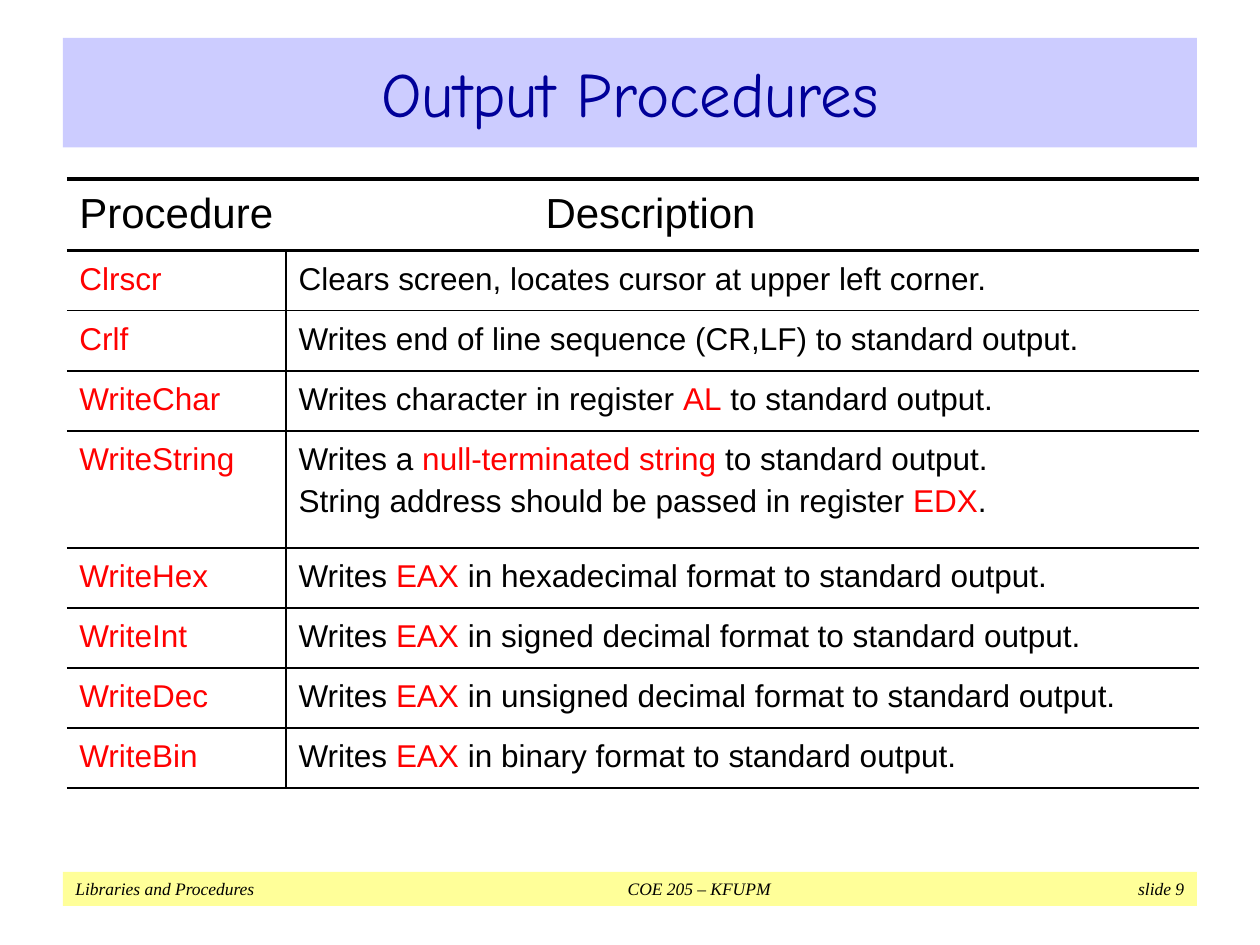
from lxml.etree import SubElement
from pptx import Presentation
from pptx.dml.color import RGBColor
from pptx.enum.shapes import MSO_SHAPE
from pptx.enum.text import MSO_ANCHOR, PP_ALIGN
from pptx.oxml import parse_xml
from pptx.oxml.ns import nsdecls, qn
from pptx.util import Inches, Pt

BLACK, RED, NAVY = "000000", "FF0000", "000099"
LILAC, YELLOW = "CCCCFF", "FFFF99"

TITLE = "Output Procedures"
FOOTER = ["Libraries and Procedures", "COE 205 – KFUPM", "slide 9"]
FOOTER_TABS = [(4.95, "ctr"), (8.8, "r")]
HEADINGS = ["Procedure", "Description"]

# Each description is a list of lines; odd pieces of a line are highlighted
PROCEDURES = [
    ("Clrscr", [["Clears screen, locates cursor at upper left corner."]]),
    ("Crlf", [["Writes end of line sequence (CR,LF) to standard output."]]),
    ("WriteChar", [["Writes character in register ", "AL", " to standard output."]]),
    ("WriteString", [
        ["Writes a ", "null-terminated string ", "to standard output."],
        ["String address should be passed in register ", "EDX", "."],
    ]),
    ("WriteHex", [["Writes ", "EAX", " in hexadecimal format to standard output."]]),
    ("WriteInt", [["Writes ", "EAX", " in signed decimal format to standard output."]]),
    ("WriteDec", [["Writes ", "EAX", " in unsigned decimal format to standard output."]]),
    ("WriteBin", [["Writes ", "EAX", " in binary format to standard output."]]),
]

COLUMN_WIDTHS = [Inches(1.74), Inches(7.25)]
HEADER_HEIGHT, ROW_HEIGHT, TALL_HEIGHT = Inches(0.57), Pt(34.3), Inches(0.93)
THICK, THIN = 2.25, 1


def color(value):
    return RGBColor.from_string(value)


def add_span(para, text, size, value, font="Arial", italic=False):
    span = para.add_run()
    span.text = text
    span.font.name = font
    span.font.size = Pt(size)
    span.font.italic = italic
    span.font.bold = False
    span.font.color.rgb = color(value)


def add_band(page, top, height, fill):
    box = page.shapes.add_shape(
        MSO_SHAPE.RECTANGLE, Inches(0.5), Inches(top), Inches(9), Inches(height))
    box.shadow.inherit = False
    box.fill.solid()
    box.fill.fore_color.rgb = color(fill)
    box.line.fill.background()
    box.text_frame.word_wrap = True
    box.text_frame.vertical_anchor = MSO_ANCHOR.MIDDLE
    return box.text_frame.paragraphs[0]


def set_borders(cell, **widths):
    """Draw the given sides (L, R, T, B) in points and clear the others."""
    properties = cell._tc.get_or_add_tcPr()
    for index, side in enumerate("LRTB"):
        width = widths.get(side, 0)
        paint = (f'<a:solidFill><a:srgbClr val="{BLACK}"/></a:solidFill>'
                 if width else "<a:noFill/>")
        properties.insert(index, parse_xml(
            f'<a:ln{side} {nsdecls("a")} w="{int(Pt(width))}">{paint}</a:ln{side}>'))


def fill_cell(cell, lines, size, value):
    cell.fill.background()
    cell.margin_left = Inches(0.1)
    cell.margin_right = 0
    cell.margin_top = cell.margin_bottom = Inches(0.09)
    frame = cell.text_frame
    for index, pieces in enumerate(lines):
        para = frame.add_paragraph() if index else frame.paragraphs[0]
        if index:
            para.space_before = Pt(0.2 * size)
        for number, piece in enumerate(pieces):
            add_span(para, piece, size, RED if number % 2 else value)


def add_procedure_table(page):
    heights = [HEADER_HEIGHT] + [
        TALL_HEIGHT if len(lines) > 1 else ROW_HEIGHT for _, lines in PROCEDURES]
    table = page.shapes.add_table(
        len(heights), 2, Inches(0.53), Inches(1.42),
        sum(COLUMN_WIDTHS), sum(heights)).table
    table.first_row = table.horz_banding = False
    for column, width in zip(table.columns, COLUMN_WIDTHS):
        column.width = width
    for row, height in zip(table.rows, heights):
        row.height = height

    # Heading row
    for index, heading in enumerate(HEADINGS):
        cell = table.cell(0, index)
        fill_cell(cell, [[heading]], 24, BLACK)
        set_borders(cell, T=THICK, B=THICK)
    indent = table.cell(0, 1).text_frame.paragraphs[0]._p.get_or_add_pPr()
    indent.set("marL", str(Inches(1.96)))

    # One row per procedure
    for row, (name, lines) in enumerate(PROCEDURES, start=1):
        top = THICK if row == 1 else THIN
        name_cell, text_cell = table.cell(row, 0), table.cell(row, 1)
        fill_cell(name_cell, [[name]], 18, RED)
        fill_cell(text_cell, lines, 18, BLACK)
        set_borders(name_cell, R=THIN, T=top, B=THIN)
        set_borders(text_cell, L=THIN, T=top, B=THIN)


def add_footer(page):
    para = add_band(page, 6.92, 0.27, YELLOW)
    para.alignment = PP_ALIGN.LEFT
    tabs = SubElement(para._p.get_or_add_pPr(), qn("a:tabLst"))
    for position, align in FOOTER_TABS:
        SubElement(tabs, qn("a:tab"), pos=str(Inches(position)), algn=align)
    add_span(para, "\t".join(FOOTER), 10, BLACK, "Times New Roman", italic=True)


def main():
    deck = Presentation()
    deck.slide_width, deck.slide_height = Inches(10), Inches(7.5)
    page = deck.slides.add_slide(deck.slide_layouts[6])
    add_footer(page)
    title = add_band(page, 0.3, 0.87, LILAC)
    title.alignment = PP_ALIGN.CENTER
    add_span(title, TITLE, 36, NAVY, "Comic Neue")
    add_procedure_table(page)
    deck.save("out.pptx")


if __name__ == "__main__":
    main()
